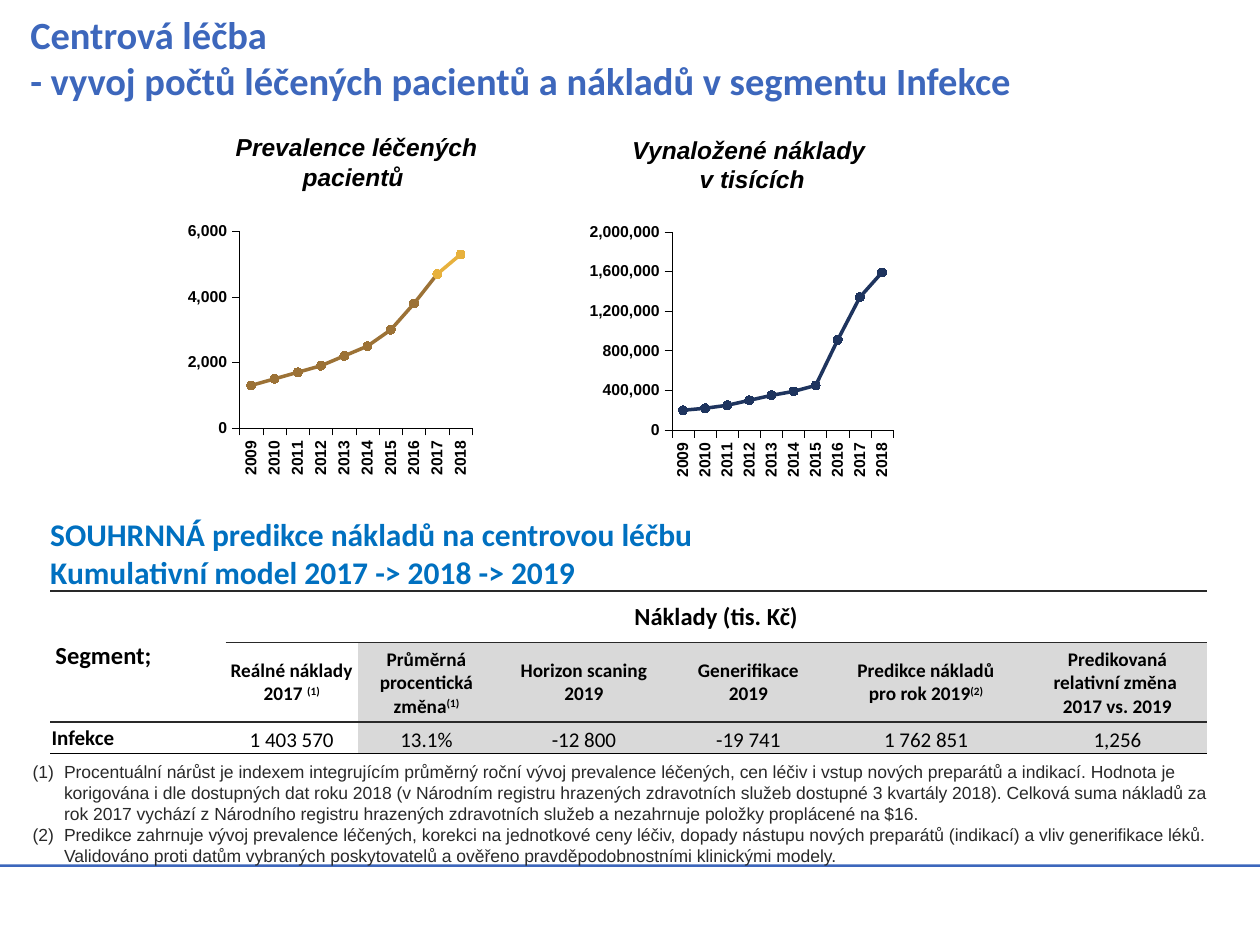
"""Build a slide on patient numbers and costs of centre treatment of infections."""
from lxml import etree
from pptx import Presentation
from pptx.chart.data import CategoryChartData
from pptx.dml.color import RGBColor
from pptx.enum.chart import XL_CHART_TYPE, XL_MARKER_STYLE, XL_TICK_MARK
from pptx.enum.shapes import MSO_SHAPE
from pptx.enum.text import MSO_ANCHOR, MSO_AUTO_SIZE, PP_ALIGN
from pptx.oxml import parse_xml
from pptx.oxml.ns import nsdecls, qn
from pptx.util import Inches, Pt

LEFT, CENTER = PP_ALIGN.LEFT, PP_ALIGN.CENTER
TOP, MIDDLE, BOTTOM = MSO_ANCHOR.TOP, MSO_ANCHOR.MIDDLE, MSO_ANCHOR.BOTTOM
LINE_MARKERS = XL_CHART_TYPE.LINE_MARKERS
CIRCLE = XL_MARKER_STYLE.CIRCLE
OUTSIDE = XL_TICK_MARK.OUTSIDE
NO_TABLE_STYLE = "{2D5ABB26-0587-4C30-8999-92F81FD0307C}"

THEME = {
    "heading": "Calibri", "body": "Arial",
    "title": "3D67BC", "subtitle": "0070C0", "text": "000000", "dark": "292929",
    "white": "FFFFFF", "grey": "D9D9D9",
    "patients": "9C7236", "prediction": "E7B13D", "costs": "1E345E",
    "title_size": 22, "subtitle_size": 18, "label_size": 14,
    "header_size": 11, "row_size": 12, "note_size": 10, "axis_size": 9,
}

TITLE = "Centrová léčba \n- vyvoj počtů léčených pacientů a nákladů v segmentu Infekce"
SUBTITLE = "SOUHRNNÁ predikce nákladů na centrovou léčbu \nKumulativní model 2017 -> 2018 -> 2019"
YEARS = [str(year) for year in range(2009, 2019)]
CHARTS = [
    {
        "label": ["Prevalence léčených pacientů "], "label_box": (1.65, 1.05, 2.36, 0.47),
        "box": (1.46, 1.58, 2.29, 2.32), "plot": (0.193, 0.111, 0.807, 0.673),
        "maximum": 6000, "step": 2000,
        "series": [
            ("patients", [1300, 1500, 1700, 1900, 2200, 2500, 3000, 3800, 4700, None]),
            ("prediction", [None] * 8 + [4700, 5300]),
        ],
    },
    {
        "label": ["Vynaložené náklady ", "v tisících"], "label_box": (4.79, 1.07, 2.36, 0.47),
        "box": (4.61, 1.58, 2.48, 2.34), "plot": (0.292, 0.111, 0.708, 0.673),
        "maximum": 2000000, "step": 400000,
        "series": [
            ("costs", [200000, 220000, 250000, 300000, 350000, 390000, 450000,
                       910000, 1340000, 1590000]),
        ],
    },
]
COLUMN_WIDTHS = [1.39, 1.05, 1.09, 1.41, 1.2, 1.62, 1.42]
ROW_HEIGHTS = [0.41, 0.61, 0.25]
ROW_HEADING, COLUMN_HEADING = "Segment;", "Náklady (tis. Kč)"
HEADERS = [
    ["Reálné náklady 2017 ^(1)"],
    ["Průměrná procentická", "změna^(1)"],
    ["Horizon scaning 2019"],
    ["Generifikace 2019"],
    ["Predikce nákladů", "pro rok 2019^(2)"],
    ["Predikovaná relativní změna ", "2017 vs. 2019"],
]
VALUES = ["Infekce", "1 403 570", "13.1%", "-12 800", "-19 741", "1 762 851", "1,256"]
NOTES = [
    "Procentuální nárůst je indexem integrujícím průměrný roční vývoj prevalence léčených, cen "
    "léčiv i vstup nových preparátů a indikací. Hodnota je korigována i dle dostupných dat roku "
    "2018 (v Národním registru hrazených zdravotních služeb dostupné 3 kvartály 2018). Celková "
    "suma nákladů za rok 2017 vychází z Národního registru hrazených zdravotních služeb a "
    "nezahrnuje položky proplácené na $16.",
    "Predikce zahrnuje vývoj prevalence léčených, korekci na jednotkové ceny léčiv, dopady nástupu "
    "nových preparátů (indikací) a vliv generifikace léků. Validováno proti datům vybraných "
    "poskytovatelů a ověřeno pravděpodobnostními klinickými modely.",
]


def color(name):
    return RGBColor.from_string(THEME[name])


def inches(values):
    return [Inches(value) for value in values]


def write_text(frame, paragraphs, size, font="heading", ink="text", bold=True, italic=False,
               align=LEFT, numbered=False):
    """Fill a text frame; a caret starts a superscript run."""
    for index, text in enumerate(paragraphs):
        paragraph = frame.paragraphs[0] if index == 0 else frame.add_paragraph()
        paragraph.alignment = align
        if numbered:
            properties = paragraph._p.get_or_add_pPr()
            properties.set("marL", str(Inches(0.25)))
            properties.set("indent", str(-Inches(0.25)))
            bullet = etree.SubElement(properties, qn("a:buAutoNum"))
            bullet.set("type", "arabicParenBoth")
        for line_index, line in enumerate(text.split("\n")):
            if line_index:
                paragraph.add_line_break()
            for part_index, part in enumerate(line.split("^")):
                run = paragraph.add_run()
                run.text = part
                run.font.name = THEME[font]
                run.font.size = Pt(THEME[size])
                run.font.bold = bold
                run.font.italic = italic
                run.font.color.rgb = color(ink)
                if part_index:
                    run.font._element.set("baseline", "30000")


def add_text(slide, box, paragraphs, anchor=TOP, inset=None, **text_format):
    frame = slide.shapes.add_textbox(*inches(box)).text_frame
    frame.word_wrap = True
    frame.vertical_anchor = anchor
    if inset is not None:
        frame.margin_left = frame.margin_right = Inches(inset)
        frame.margin_top = frame.margin_bottom = Inches(inset)
    write_text(frame, paragraphs, **text_format)


def style_axis(axis):
    axis.has_major_gridlines = False
    axis.major_tick_mark = OUTSIDE
    axis.format.line.color.rgb = color("text")
    axis.format.line.width = Pt(0.25)
    font = axis.tick_labels.font
    font.name, font.size, font.bold = THEME["body"], Pt(THEME["axis_size"]), True
    font.color.rgb = color("text")


def add_line_chart(slide, spec):
    data = CategoryChartData()
    data.categories = YEARS
    for index, (_, values) in enumerate(spec["series"], 1):
        data.add_series(f"Series {index}", values)
    chart = slide.shapes.add_chart(LINE_MARKERS, *inches(spec["box"]), data).chart
    chart.has_legend = chart.has_title = False
    chart.font.name, chart.font.size, chart.font.bold = THEME["body"], Pt(12), True
    chart.plots[0].vary_by_categories = False
    for axis in (chart.category_axis, chart.value_axis):
        style_axis(axis)
    years = chart.category_axis._element.find(qn("c:txPr")).find(qn("a:bodyPr"))
    years.set("rot", "-5400000")
    years.set("vert", "horz")
    axis = chart.value_axis
    axis.minimum_scale, axis.maximum_scale = 0, spec["maximum"]
    axis.major_unit = spec["step"]
    axis.tick_labels.number_format = "#,##0"
    axis.tick_labels.number_format_is_linked = False
    for series, (name, _) in zip(chart.plots[0].series, spec["series"]):
        series.smooth = False
        series.format.line.color.rgb = color(name)
        series.format.line.width = Pt(2)
        series.marker.style, series.marker.size = CIRCLE, 5
        for part in (series.marker.format.fill, series.marker.format.line.fill):
            part.solid()
            part.fore_color.rgb = color(name)
    sizes = "".join(f'<c:{key} val="{value}"/>' for key, value in zip("xywh", spec["plot"]))
    layout = parse_xml(
        f'<c:layout {nsdecls("c")}><c:manualLayout><c:layoutTarget val="inner"/>'
        f'<c:xMode val="edge"/><c:yMode val="edge"/>{sizes}</c:manualLayout></c:layout>')
    plot_area = chart._chartSpace.chart.plotArea
    for old in plot_area.findall(qn("c:layout")):
        plot_area.remove(old)
    plot_area.insert(0, layout)


def format_cell(cell, paragraphs, fill="white", anchor=MIDDLE, inset=0.04, edges=(), **text_format):
    cell.vertical_anchor = anchor
    cell.margin_left = cell.margin_right = cell.margin_top = Inches(inset)
    cell.margin_bottom = Inches(inset if inset > 0.01 else 0)
    for side, ink, width in edges:
        cell._tc.get_or_add_tcPr().append(parse_xml(
            f'<a:{side} {nsdecls("a")} w="{Pt(width)}"><a:solidFill>'
            f'<a:srgbClr val="{THEME[ink]}"/></a:solidFill></a:{side}>'))
    cell.fill.solid()
    cell.fill.fore_color.rgb = color(fill)
    write_text(cell.text_frame, paragraphs, **text_format)


def add_cost_table(slide):
    box = inches((0.4, 4.69, sum(COLUMN_WIDTHS), sum(ROW_HEIGHTS)))
    table = slide.shapes.add_table(len(ROW_HEIGHTS), len(COLUMN_WIDTHS), *box).table
    table.first_row = table.horz_banding = False
    table._tbl.tblPr.find(qn("a:tableStyleId")).text = NO_TABLE_STYLE
    for column, width in zip(table.columns, COLUMN_WIDTHS):
        column.width = Inches(width)
    for row, height in zip(table.rows, ROW_HEIGHTS):
        row.height = Inches(height)
    top, thin, bottom = ("lnT", "dark", 1), ("lnB", "dark", 0.5), ("lnB", "dark", 1)
    for index, value in enumerate(VALUES):
        fill = "white" if index < 2 else "grey"
        heading = [ROW_HEADING] if index == 0 else [COLUMN_HEADING] if index == 1 else []
        format_cell(table.cell(0, index), heading, size="label_size",
                    align=CENTER if index else LEFT, edges=[top, thin] if index else [top])
        format_cell(table.cell(1, index), HEADERS[index - 1] if index else [], fill,
                    size="header_size", align=CENTER, edges=[bottom])
        format_cell(table.cell(2, index), [value], fill, BOTTOM if index else MIDDLE, 0.01,
                    size="row_size", bold=index == 0, align=CENTER if index else LEFT,
                    edges=[top, ("lnB", "text", 1)])
    table.cell(0, 0).merge(table.cell(1, 0))
    table.cell(0, 1).merge(table.cell(0, len(VALUES) - 1))


def main():
    presentation = Presentation()
    presentation.slide_width, presentation.slide_height = Inches(10), Inches(7.5)
    slide = presentation.slides.add_slide(presentation.slide_layouts[5])
    rule = slide.shapes.add_shape(MSO_SHAPE.RECTANGLE, *inches((0, 6.86, 10, 0.02)))
    rule.shadow.inherit = False
    rule.fill.solid()
    rule.fill.fore_color.rgb = color("title")
    rule.line.fill.background()
    title = slide.shapes.title
    title.left, title.top, title.width, title.height = inches((0.14, 0.09, 9.69, 0.72))
    title.text_frame.auto_size = MSO_AUTO_SIZE.NONE
    title.text_frame.vertical_anchor = MIDDLE
    write_text(title.text_frame, [TITLE], size="title_size", ink="title")
    for spec in CHARTS:
        add_line_chart(slide, spec)
        add_text(slide, spec["label_box"], spec["label"], MIDDLE, 0, size="label_size",
                 font="body", italic=True, align=CENTER)
    add_cost_table(slide)
    add_text(slide, (0.16, 5.99, 9.65, 0.94), NOTES, size="note_size", font="body", ink="dark",
             bold=False, numbered=True)
    add_text(slide, (0.3, 4.04, 5.97, 0.71), [SUBTITLE], size="subtitle_size", ink="subtitle")
    presentation.save("out.pptx")


if __name__ == "__main__":
    main()
